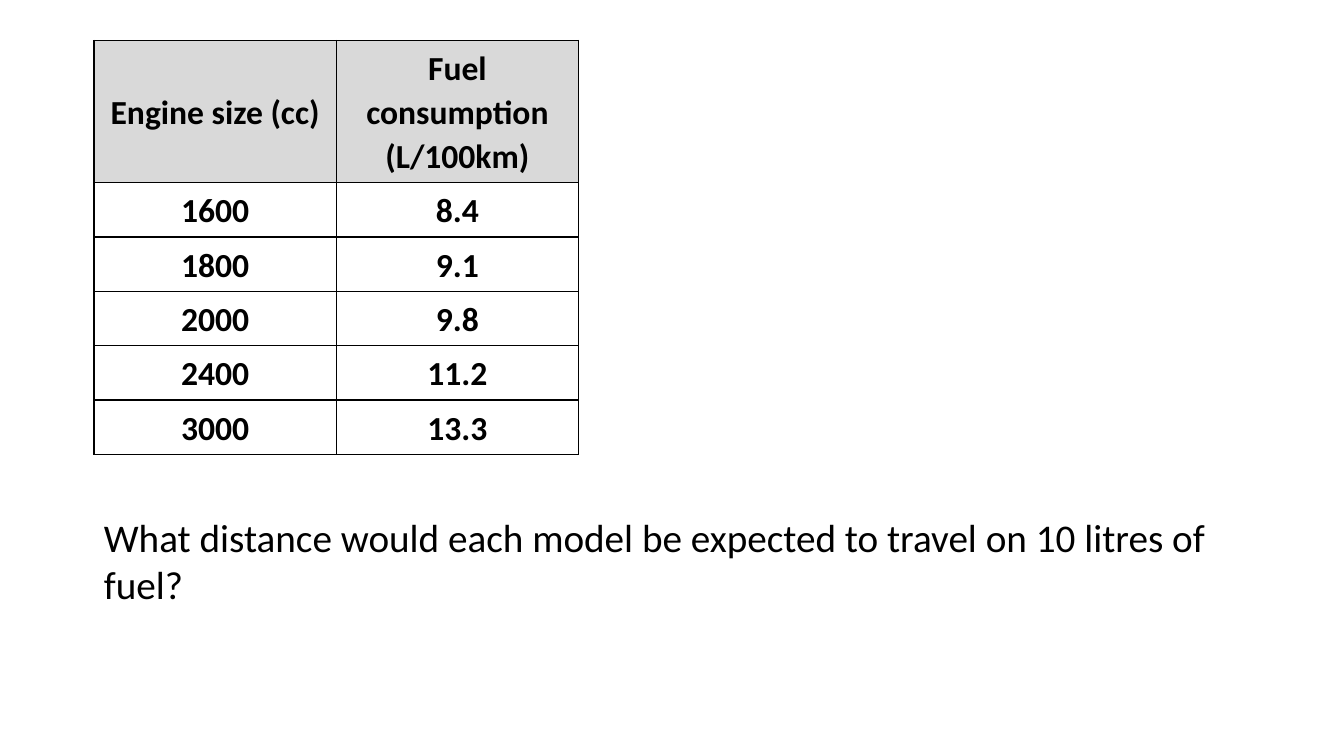
from pptx import Presentation
from pptx.dml.color import RGBColor
from pptx.enum.text import MSO_ANCHOR as Anchor, MSO_AUTO_SIZE as AutoSize, PP_ALIGN as Align
from pptx.oxml import parse_xml
from pptx.oxml.ns import nsdecls
from pptx.util import Cm, Pt

ENGINES = [
    ("Engine size (cc)", "Fuel consumption (L/100km)"),
    ("1600", "8.4"),
    ("1800", "9.1"),
    ("2000", "9.8"),
    ("2400", "11.2"),
    ("3000", "13.3"),
]
QUESTION = "What distance would each model be expected to travel on 10 litres of fuel?"


def color(code):
    return RGBColor.from_string(code)


class Page:
    font = "Calibri"
    ink = "000000"
    header_fill = "D9D9D9"
    cell_margin = Cm(0.13)

    def __init__(self, deck):
        self.slide = deck.slides.add_slide(deck.slide_layouts[6])

    def style(self, para, size, bold=False):
        para.font.name = self.font
        para.font.size = Pt(size)
        para.font.bold = bold
        para.font.color.rgb = color(self.ink)

    def border(self, cell):
        """Draw a thin line on all four sides of a cell."""
        properties = cell._tc.get_or_add_tcPr()
        for side in "LRTB":
            properties.append(parse_xml(
                f'<a:ln{side} {nsdecls("a")} w="{Pt(1)}"><a:solidFill>'
                f'<a:srgbClr val="{self.ink}"/></a:solidFill></a:ln{side}>'))

    def cell(self, cell, text, is_header):
        self.border(cell)
        if is_header:
            cell.fill.solid()
            cell.fill.fore_color.rgb = color(self.header_fill)
        else:
            cell.fill.background()
        cell.margin_left = cell.margin_right = self.cell_margin
        cell.margin_top = cell.margin_bottom = self.cell_margin
        cell.vertical_anchor = Anchor.MIDDLE if is_header else Anchor.BOTTOM
        cell.text = text
        para = cell.text_frame.paragraphs[0]
        para.alignment = Align.CENTER
        para.line_spacing = 1.07
        para.space_after = Pt(8)
        self.style(para, 24, bold=True)

    def table(self, rows, left, top, width, header_height, row_height):
        height = header_height + row_height * (len(rows) - 1)
        table = self.slide.shapes.add_table(
            len(rows), len(rows[0]), Cm(left), Cm(top), Cm(width), Cm(height)).table
        for index, texts in enumerate(rows):
            is_header = index == 0
            table.rows[index].height = Cm(header_height if is_header else row_height)
            for column, text in enumerate(texts):
                self.cell(table.cell(index, column), text, is_header)

    def text(self, text, left, top, width, height):
        box = self.slide.shapes.add_textbox(Cm(left), Cm(top), Cm(width), Cm(height))
        frame = box.text_frame
        frame.word_wrap = True
        frame.auto_size = AutoSize.SHAPE_TO_FIT_TEXT
        frame.text = text
        self.style(frame.paragraphs[0], 28)


def main():
    deck = Presentation()
    deck.slide_width, deck.slide_height = Cm(33.87), Cm(19.05)
    page = Page(deck)
    page.table(ENGINES, left=2.37, top=1.02, width=12.21, header_height=3.58, row_height=1.37)
    page.text(QUESTION, left=2.37, top=12.8, width=30.38, height=2.65)
    deck.save("out.pptx")


if __name__ == "__main__":
    main()
